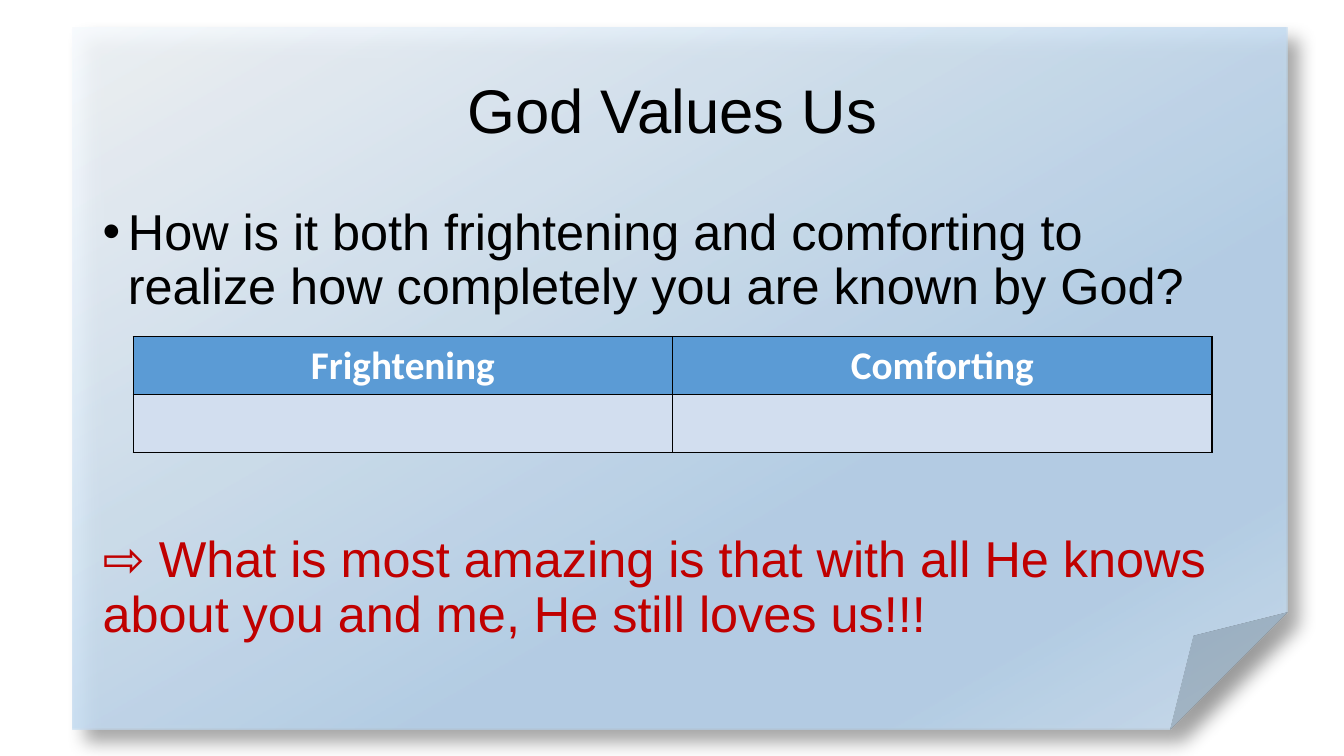
from pptx import Presentation
from pptx.dml.color import RGBColor
from pptx.enum.shapes import MSO_SHAPE
from pptx.enum.text import MSO_ANCHOR, PP_ALIGN
from pptx.oxml import parse_xml
from pptx.oxml.ns import nsdecls
from pptx.util import Inches, Pt

FOLD = MSO_SHAPE.FOLDED_CORNER
MID, TOP = MSO_ANCHOR.MIDDLE, MSO_ANCHOR.TOP
MID_ALIGN, LEFT = PP_ALIGN.CENTER, PP_ALIGN.LEFT
BLACK = RGBColor(0x00, 0x00, 0x00)
WHITE = RGBColor(0xFF, 0xFF, 0xFF)
RED = RGBColor(0xC0, 0x00, 0x00)
BLUE = RGBColor(0x5B, 0x9B, 0xD5)
PALE = RGBColor(0xD2, 0xDE, 0xEF)
STOPS = [
    (0, RGBColor(0xF7, 0xFA, 0xFD)),
    (64, RGBColor(0xB5, 0xD2, 0xEC)),
    (83, RGBColor(0xB5, 0xD2, 0xEC)),
    (100, RGBColor(0xCE, 0xE1, 0xF2)),
]
HEAD = {"name": "Arial", "size": Pt(44), "bold": False}
BODY = {"name": "Arial", "size": Pt(36)}
CELL = {"name": "Calibri", "size": Pt(28), "bold": True}


class Deck:
    def __init__(self):
        self.prs = Presentation()
        self.prs.slide_width = Inches(13.33)
        self.prs.slide_height = Inches(7.5)
        self.slide = self.prs.slides.add_slide(self.prs.slide_layouts[5])
        self.shapes = self.slide.shapes

    def style(self, para, look, color, align, space=0.9):
        para.alignment = align
        para.line_spacing = space
        for key, value in look.items():
            setattr(para.font, key, value)
        para.font.color.rgb = color

    def sheet(self, box):
        page = self.shapes.add_shape(FOLD, *map(Inches, box))
        page.line.fill.background()
        page.fill.background()
        props = page.element.spPr
        stops = "".join(
            f'<a:gs pos="{pos * 1000}"><a:srgbClr val="{color}">'
            f'<a:alpha val="87000"/></a:srgbClr></a:gs>'
            for pos, color in STOPS)
        grad = parse_xml(
            f'<a:gradFill {nsdecls("a")} rotWithShape="1"><a:gsLst>{stops}</a:gsLst>'
            '<a:lin ang="3600000" scaled="0"/></a:gradFill>')
        props.replace(props.find("{*}noFill"), grad)
        props.append(parse_xml(
            f'<a:effectLst {nsdecls("a")}><a:outerShdw blurRad="{Pt(13)}" '
            f'dist="{Pt(13)}" dir="2700000" algn="tl" rotWithShape="0">'
            '<a:srgbClr val="000000"><a:alpha val="40000"/></a:srgbClr>'
            '</a:outerShdw></a:effectLst>'))
        self.shapes.element.insert(2, page.element)

    def title(self, text, box):
        head = self.shapes.title
        head.left, head.top, head.width, head.height = map(Inches, box)
        frame = head.text_frame
        frame.text = text
        frame.word_wrap = True
        frame.vertical_anchor = MID
        self.style(frame.paragraphs[0], HEAD, BLACK, MID_ALIGN)

    def text(self, text, box, color, bullet=False):
        frame = self.shapes.add_textbox(*map(Inches, box)).text_frame
        frame.word_wrap = True
        frame.vertical_anchor = TOP
        para = frame.paragraphs[0]
        para.text = text
        if bullet:
            props = para._p.get_or_add_pPr()
            props.set("marL", str(Inches(0.25)))
            props.set("indent", str(Inches(-0.25)))
            for tag in ('buFont {} typeface="Arial"', 'buChar {} char="•"'):
                props.append(parse_xml(f'<a:{tag.format(nsdecls("a"))}/>'))
        self.style(para, BODY, color, LEFT)

    def border(self, cell):
        props = cell._tc.get_or_add_tcPr()
        for at, side in enumerate(("lnL", "lnR", "lnT", "lnB")):
            props.insert(at, parse_xml(
                f'<a:{side} {nsdecls("a")} w="{Pt(1)}"><a:solidFill>'
                f'<a:srgbClr val="{BLACK}"/></a:solidFill></a:{side}>'))

    def table(self, rows, box):
        grid = self.shapes.add_table(len(rows), len(rows[0]), *map(Inches, box)).table
        grid.first_row = grid.horz_banding = False
        for r, row in enumerate(rows):
            for c, text in enumerate(row):
                cell = grid.cell(r, c)
                cell.text = text
                cell.fill.solid()
                cell.fill.fore_color.rgb = PALE if r else BLUE
                self.border(cell)
                self.style(cell.text_frame.paragraphs[0], CELL,
                           BLACK if r else WHITE, MID_ALIGN, 1.0)


def main():
    deck = Deck()
    deck.sheet((0.72, 0.27, 12.05, 6.97))
    deck.title("God Values Us", (0.92, 0.4, 11.5, 1.45))
    deck.text("How is it both frightening and comforting to realize how "
              "completely you are known by God?", (0.92, 2, 11.5, 1.2), BLACK, True)
    deck.text("⇨ What is most amazing is that with all He knows about you "
              "and me, He still loves us!!!", (0.92, 5.25, 11.5, 1.2), RED)
    deck.table([["Frightening", "Comforting"], ["", ""]], (1.32, 3.34, 10.7, 1.15))
    deck.prs.save("out.pptx")


if __name__ == "__main__":
    main()
